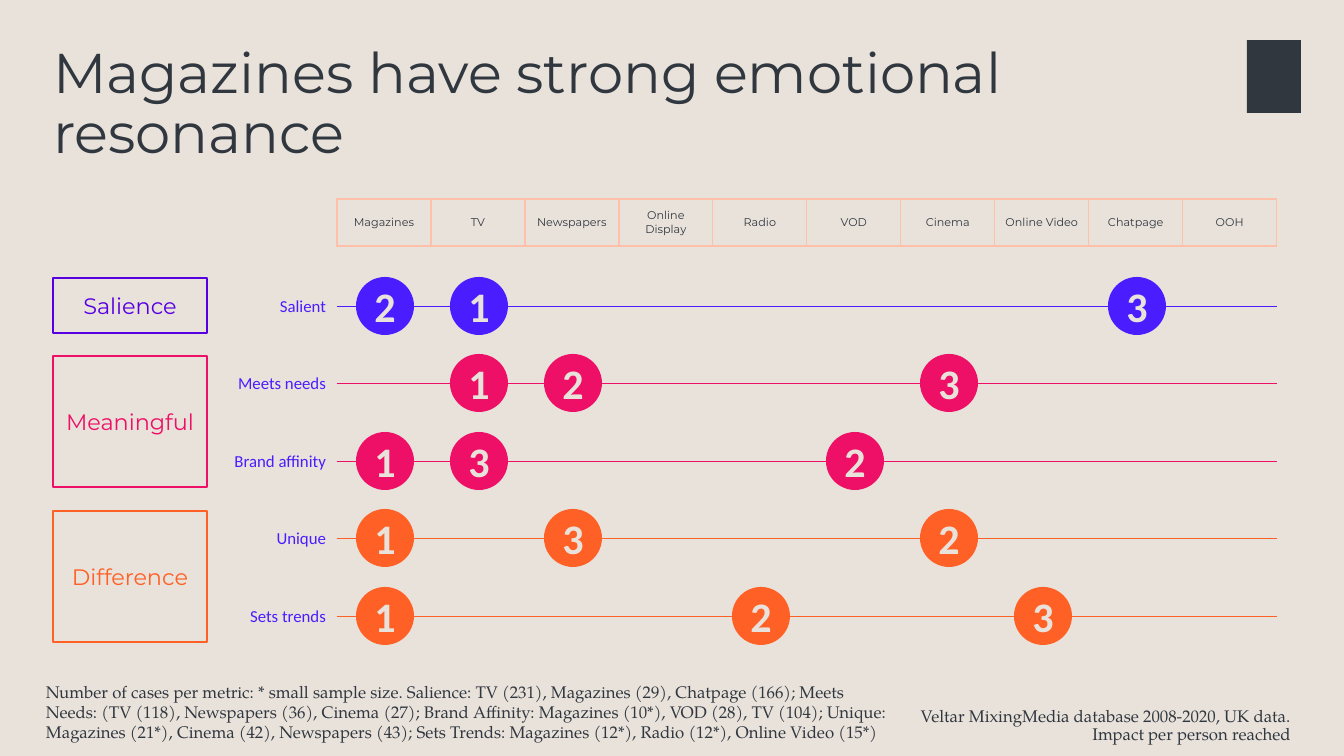
import lxml.etree
import pptx
import pptx.dml.color
import pptx.enum.shapes
import pptx.enum.text
import pptx.oxml
import pptx.oxml.ns
import pptx.util

INK, SAND, PEACH = "30373F", "E9E2DB", "FFBFA8"
BLUE, PINK, CORAL, PLUM = "491DFF", "ED1066", "FF6025", "5600E1"
SERIF, SANS, ROUND = "TeX Gyre Pagella", "Montserrat", "Calibri"
SCALE = 12192000 / 1344
hue = pptx.dml.color.RGBColor.from_string
qn = pptx.oxml.ns.qn
Align = pptx.enum.text.PP_ALIGN
Anchor = pptx.enum.text.MSO_ANCHOR
Shape = pptx.enum.shapes.MSO_SHAPE


def px(*nums):
    """Turn lengths in px into a list of EMU."""
    return [pptx.util.Emu(round(n * SCALE)) for n in nums]


def write(frame, words, size, face, color, align, anchor, bold=False):
    form = {"word_wrap": True, "vertical_anchor": anchor,
            "auto_size": pptx.enum.text.MSO_AUTO_SIZE.NONE}
    for key, val in form.items():
        setattr(frame, key, val)
    par = frame.paragraphs[0]
    par.alignment = align
    run = par.add_run()
    run.text = words
    font = {"size": pptx.util.Pt(size), "name": face, "bold": bold}
    for key, val in font.items():
        setattr(run.font, key, val)
    run.font.color.rgb = hue(color)
    return par


deck = pptx.Presentation()
deck.slide_width, deck.slide_height = px(1344, 756)
slide = deck.slides.add_slide(deck.slide_layouts[1])
slide.background.fill.solid()
slide.background.fill.fore_color.rgb = hue(SAND)
shapes = slide.shapes

# Title and source line
title, source = slide.placeholders
for holder, spot in ((title, (43, 40, 1121, 146)), (source, (907, 706, 394, 41))):
    for key, val in zip(("left", "top", "width", "height"), px(*spot)):
        setattr(holder, key, val)
head = write(title.text_frame, "Magazines have strong emotional resonance",
             40, SANS, INK, Align.LEFT, Anchor.TOP)
foot = write(source.text_frame,
             "Veltar MixingMedia database 2008-2020, UK data. "
             "Impact per person reached",
             12, SERIF, INK, Align.RIGHT, Anchor.MIDDLE)
head.line_spacing = foot.line_spacing = 0.9
foot.space_before = pptx.util.Pt(0)
props = foot._p.get_or_add_pPr()
props.set("marL", "0")
props.set("indent", "0")
lxml.etree.SubElement(props, qn("a:buNone"))

# Plain block in the top corner
block = shapes.add_shape(Shape.RECTANGLE, *px(1247, 40, 54, 73))
block.shadow.inherit = False
block.fill.solid()
block.fill.fore_color.rgb = hue(INK)
block.line.fill.background()

# Sample sizes
note = shapes.add_textbox(*px(43, 691, 858, 54)).text_frame
for side in ("left", "right", "top", "bottom"):
    setattr(note, "margin_" + side, px(3)[0])
write(note,
      "Number of cases per metric: * small sample size. Salience: TV (231), "
      "Magazines (29), Chatpage (166); Meets Needs: (TV (118), Newspapers (36), "
      "Cinema (27); Brand Affinity: Magazines (10*), VOD (28), TV (104); Unique: "
      "Magazines (21*), Cinema (42), Newspapers (43); Sets Trends: Magazines "
      "(12*), Radio (12*), Online Video (15*)",
      12, SERIF, INK, Align.LEFT, Anchor.BOTTOM)

# Media header
media = ["Magazines", "TV", "Newspapers", "Online Display", "Radio", "VOD",
         "Cinema", "Online Video", "Chatpage", "OOH"]
LEFT, STEP = 337, 94
table = shapes.add_table(1, len(media), *px(LEFT, 199, STEP * len(media), 47)).table
table.first_row = table.horz_banding = False
for col, name in enumerate(media):
    cell = table.cell(0, col)
    cell.margin_left, cell.margin_right = px(8, 8)
    cell.vertical_anchor = Anchor.MIDDLE
    par = cell.text_frame.paragraphs[0]
    par.alignment = Align.CENTER
    par.text = name
    par.font.size, par.font.name = pptx.util.Pt(8), SANS
    par.font.color.rgb = hue(INK)
    props = cell._tc.get_or_add_tcPr()
    for tag in ("a:lnL", "a:lnR", "a:lnT", "a:lnB"):
        edge = lxml.etree.SubElement(props, qn(tag), w="12700")
        fill = lxml.etree.SubElement(edge, qn("a:solidFill"))
        lxml.etree.SubElement(fill, qn("a:srgbClr"), val=PEACH)
    cell.fill.background()

# Metric groups
for name, top, high, color in (("Salience", 278, 55, PLUM),
                               ("Meaningful", 356, 131, PINK),
                               ("Difference", 511, 131, CORAL)):
    box = shapes.add_shape(Shape.RECTANGLE, *px(53, top, 154, high))
    box.shadow.inherit = False
    box.fill.background()
    box.line.color.rgb = hue(color)
    box.line.width = pptx.util.Pt(1)
    write(box.text_frame, name, 16, SANS, color, Align.CENTER, Anchor.MIDDLE)

# Metric rows: each medium with its rank
ranks = [("Salient", BLUE, {"Magazines": 2, "TV": 1, "Chatpage": 3}),
         ("Meets needs", PINK, {"TV": 1, "Newspapers": 2, "Cinema": 3}),
         ("Brand affinity", PINK, {"Magazines": 1, "TV": 3, "VOD": 2}),
         ("Unique", CORAL, {"Magazines": 1, "Newspapers": 3, "Cinema": 2}),
         ("Sets trends", CORAL, {"Magazines": 1, "Radio": 2, "Online Video": 3})]
SIZE = 58
for row, (name, color, places) in enumerate(ranks):
    mid = 306 + 155 * row // 2
    line = shapes.add_connector(pptx.enum.shapes.MSO_CONNECTOR.STRAIGHT,
                                *px(LEFT, mid, LEFT + STEP * len(media), mid))
    line.line.color.rgb = hue(color)
    line.line.width = pptx.util.Pt(0.5)
    lxml.etree.SubElement(line._element.spPr, qn("a:effectLst"))
    label = shapes.add_textbox(*px(196, mid - 15, 140, 30))
    write(label.text_frame, name, 12, ROUND, BLUE, Align.RIGHT, Anchor.MIDDLE)
    for medium, rank in places.items():
        x = LEFT + 48 + STEP * media.index(medium)
        dot = shapes.add_shape(Shape.OVAL,
                               *px(x - SIZE // 2, mid - SIZE // 2, SIZE, SIZE))
        dot.shadow.inherit = False
        dot.fill.solid()
        dot.fill.fore_color.rgb = hue(color)
        dot.line.fill.background()
        write(dot.text_frame, str(rank), 30, ROUND, SAND,
              Align.CENTER, Anchor.MIDDLE, bold=True)

deck.save("out.pptx")
